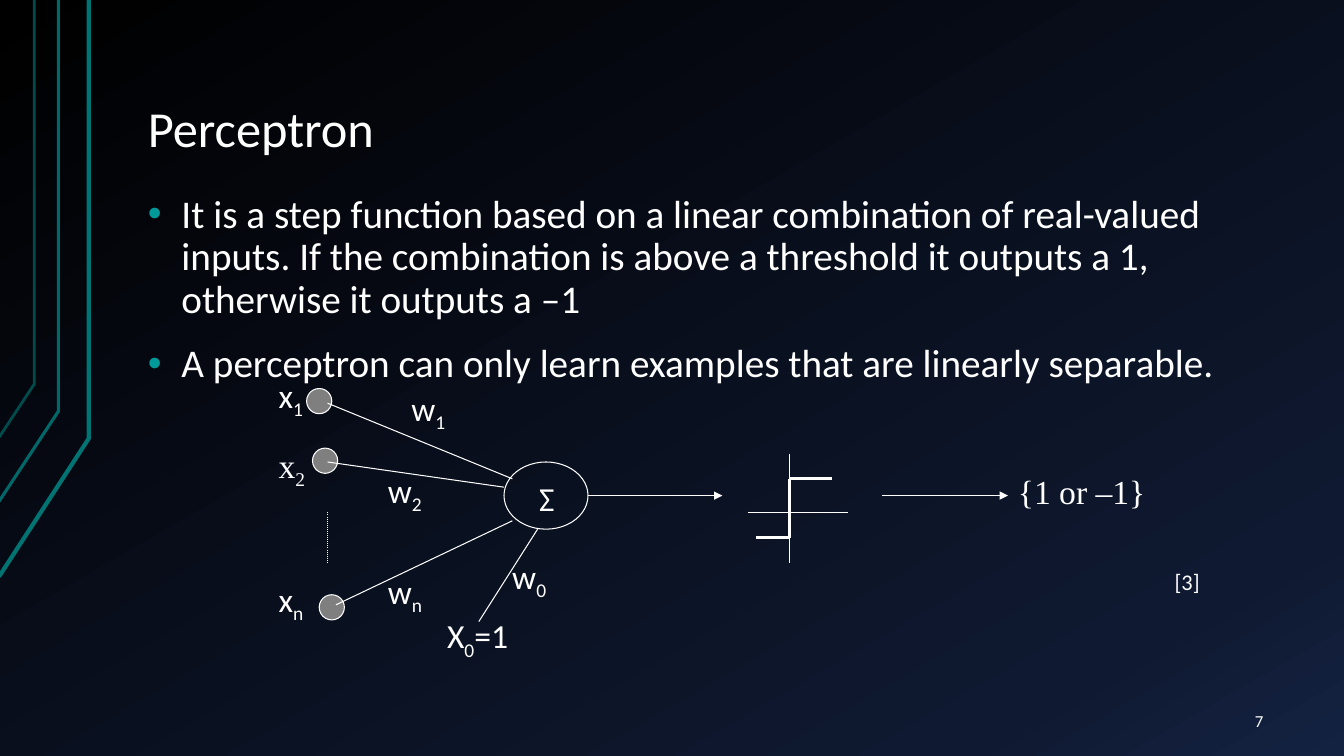
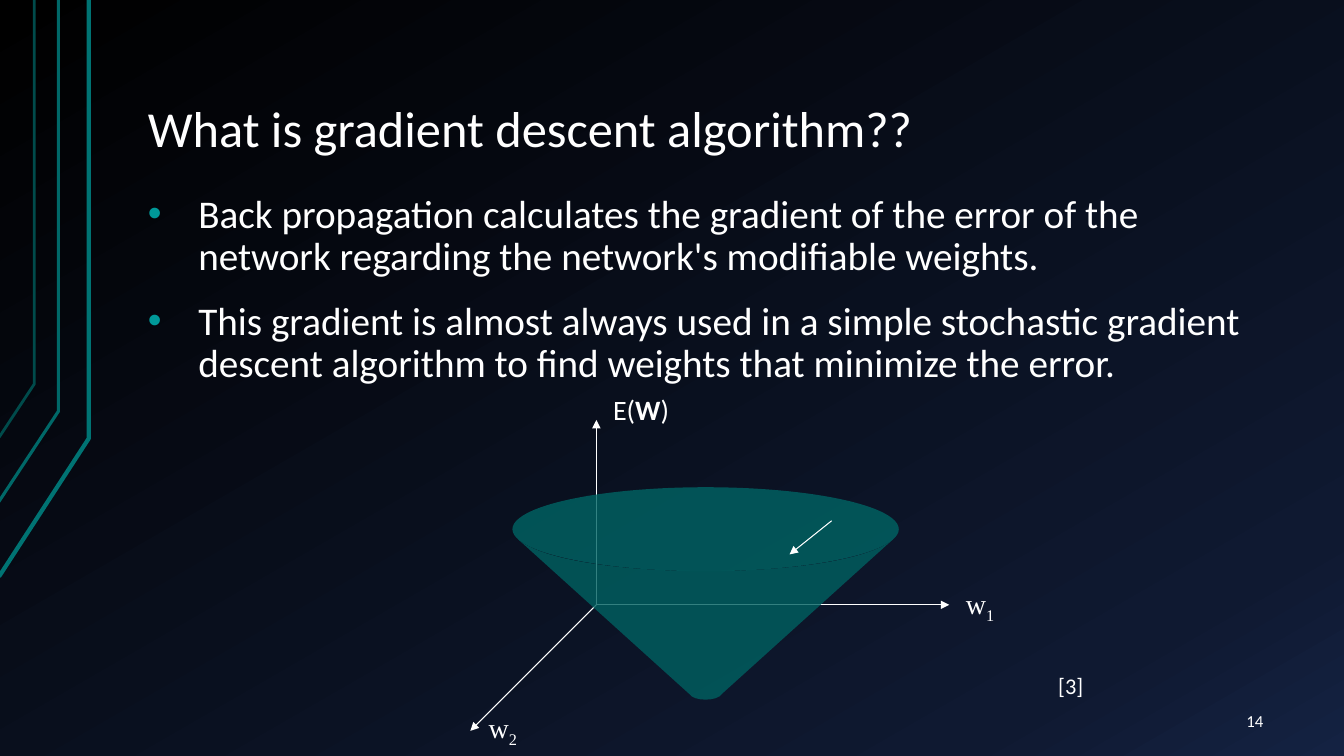
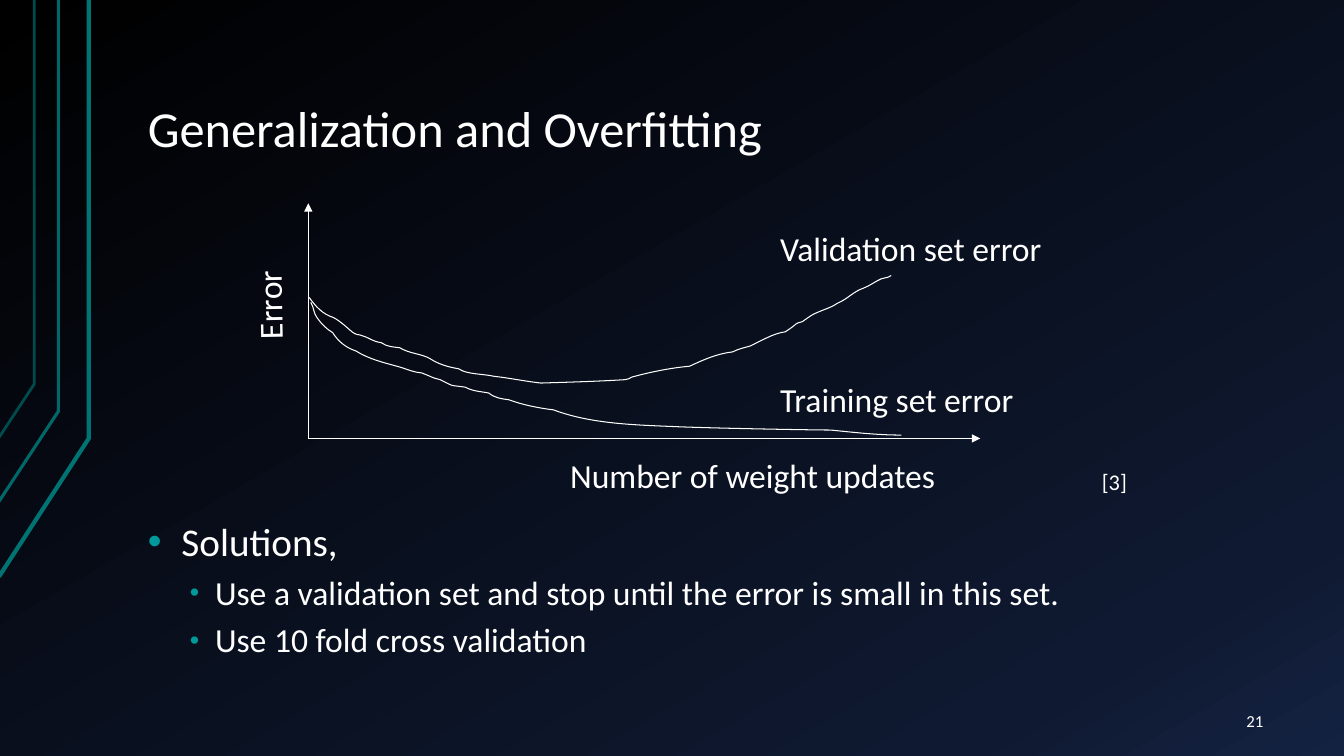
from dataclasses import dataclass
from math import cos, radians, sin, tan
from typing import NamedTuple

from lxml import etree
from pptx import Presentation, util as u
from pptx.dml.color import RGBColor
from pptx.enum import dml, shapes, text
from pptx.oxml.ns import qn

COLUMNS, ROWS = 160, 90  # grid cells of a twelfth of an inch
CELL = u.Inches(1) // 12
COLORS = {
    "text": "FFFFFF", "bullet": "009999", "node": "7F7F7F",
    "cone": "006464", "cone side": "006161",
    "stripe": "007373", "stripe mid": "006868", "stripe dim": "004B4B",
}
BACKGROUND = ((0, "000000"), (85, "0F1931"), (100, "142242"))
SANS, SERIF = "Calibri", "Times New Roman"
WIDE_MARGINS = (1.6, 0.8)
NORMAL_MARGINS = (1.2, 0.6)


class Point(NamedTuple):
    x: float
    y: float


class Box(NamedTuple):
    x: float
    y: float
    width: float
    height: float


class Run(NamedTuple):
    text: str
    subscript: bool = False
    bold: bool = False


@dataclass
class Label:
    box: Box
    runs: list
    size: float = 24
    font: str = SANS
    rotation: float = 0


@dataclass
class Line:
    start: Point
    end: Point
    width: float = 0.75
    arrow: bool = False
    dotted: bool = False


@dataclass
class Bullet:
    text: str
    size: float = 28
    left: float = 4
    hanging: float = 4
    before: float = 16
    bullet_percent: int = 100


@dataclass
class Outline:
    """A start and segments: two numbers for a line, six for a Bezier curve."""
    start: Point
    segments: list
    closed: bool = False


@dataclass
class Stripe:
    outline: Outline
    width: float
    color: str


STRIPES = [
    Stripe(Outline(Point(-0.12, 68.64), [(10.56, 52.2), (10.56, 0)]), 3, "stripe"),
    Stripe(Outline(Point(-0.24, 59.88), [(6.96, 48.96), (6.96, 0)]), 2.25, "stripe mid"),
    Stripe(Outline(Point(-0.12, 52.08), [(4.08, 45.72), (4.08, 0)]), 2, "stripe dim"),
]

VALIDATION_CURVE = Outline(Point(36.8, 35.4), [
    (37.6, 36.5, 38.4, 37.4, 39.7, 37.8), (40.6, 38.3, 41.2, 38.9, 41.9, 39.5),
    (42.6, 40, 42.5, 39.7, 43.2, 40), (44.2, 40.3, 44.2, 40.6, 45.4, 40.8),
    (46.1, 41.3, 46.8, 41.3, 47.6, 41.4), (48.7, 42.1, 50.2, 42.1, 51.2, 42.7),
    (52.3, 43.4, 53.4, 43.7, 54.6, 43.9), (55.6, 44.6, 57.6, 44.5, 58.8, 44.8),
    (60.7, 45, 62.5, 45.4, 64.4, 45.6), (67.8, 45.5, 71.2, 45.4, 74.4, 45.2),
    (74.8, 45.2, 75, 45, 75.2, 44.9), (77.4, 44.3, 79.8, 43.8, 82.1, 43.6),
    (83.8, 42.8, 85.4, 42.1, 87.2, 41.9), (88, 41.5, 88.6, 41.4, 89.3, 41.2),
    (90.6, 40.6, 92, 39.7, 93.5, 39.5), (95.2, 38.4, 94.4, 38.6, 95.5, 38.3),
    (96.1, 37.9, 96.7, 37.4, 97.3, 37.2), (98.2, 36.8, 99, 36.6, 99.7, 36.1),
    (100.9, 35.6, 101.6, 34.7, 102.8, 34.3), (103.6, 34, 104.2, 33.5, 104.9, 33.2),
    (106, 32.9, 105.6, 33.1, 106.1, 32.8)])
TRAINING_CURVE = Outline(Point(37, 36), [
    (37.4, 36.6, 37.3, 37.3, 37.8, 37.9), (38.3, 38.6, 38.9, 39.2, 39.6, 39.6),
    (40.3, 40.7, 41.2, 41.4, 42.4, 41.8), (44, 42.8, 45.8, 43.2, 47.6, 43.7),
    (48.6, 44, 49.1, 44.3, 50.2, 44.4), (52, 45.1, 51.2, 44.9, 52.4, 45.2),
    (54.2, 46.1, 53.3, 45.8, 55.4, 46.1), (56.3, 46.6, 57.2, 46.6, 58.2, 46.8),
    (58.9, 47.4, 59.8, 47.5, 60.6, 47.6), (62.2, 48.2, 64.2, 48.6, 65.9, 48.8),
    (70.4, 50.5, 75.8, 50.6, 80.5, 50.8), (85.2, 51, 97, 51.2, 98.9, 51.2),
    (101.8, 51.5, 104.5, 51.8, 107.3, 51.8)])


def cells(count: float) -> u.Emu:
    return u.Emu(round(count * CELL))


def rgb(name: str) -> RGBColor:
    return RGBColor.from_string(COLORS[name])


def place(box: Box) -> list:
    return [cells(value) for value in box]


# ---- Text ----

def add_run(paragraph, run: Run, size: float, font: str) -> None:
    item = paragraph.add_run()
    item.text = run.text
    item.font.size = u.Pt(size)
    item.font.name = font
    item.font.bold = run.bold
    item.font.color.rgb = rgb("text")
    if run.subscript:
        item._r.get_or_add_rPr().set("baseline", "-25000")


def add_frame(slide, box: Box, margins: tuple = NORMAL_MARGINS, wrap: bool = True):
    shape = slide.shapes.add_textbox(*place(box))
    frame = shape.text_frame
    frame.word_wrap = wrap
    frame.margin_left = frame.margin_right = cells(margins[0])
    frame.margin_top = frame.margin_bottom = cells(margins[1])
    return shape, frame


def add_label(slide, label: Label) -> None:
    shape, frame = add_frame(slide, label.box, wrap=False)
    frame.auto_size = text.MSO_AUTO_SIZE.SHAPE_TO_FIT_TEXT
    shape.rotation = label.rotation
    for run in label.runs:
        add_run(frame.paragraphs[0], run, label.size, label.font)


def variable(x: float, y: float, width: float, name: str, index: str, **style) -> Label:
    return Label(Box(x, y, width, 6), [Run(name), Run(index, True)], **style)


def caption(x: float, y: float, width: float, words: str, **style) -> Label:
    return Label(Box(x, y, width, 6), [Run(words)], **style)


def citation(x: float, y: float) -> Label:
    return Label(Box(x, y, 6, 4.4), [Run("[3]")], size=16)


def add_bullets(slide, bullets: list, top: float = 22.36) -> None:
    _, frame = add_frame(slide, Box(16, top, 136, 81 - top), WIDE_MARGINS)
    for index, bullet in enumerate(bullets):
        paragraph = frame.add_paragraph() if index else frame.paragraphs[0]
        properties = paragraph._p.get_or_add_pPr()
        properties.set("marL", str(cells(bullet.left)))
        properties.set("indent", str(-cells(bullet.hanging)))
        color = etree.SubElement(properties, qn("a:buClr"))
        etree.SubElement(color, qn("a:srgbClr"), val=COLORS["bullet"])
        etree.SubElement(properties, qn("a:buSzPct"), val=str(bullet.bullet_percent * 1000))
        etree.SubElement(properties, qn("a:buFont"), typeface="Arial")
        etree.SubElement(properties, qn("a:buChar"), char="•")
        paragraph.line_spacing = 0.9
        if index:
            paragraph.space_before = u.Pt(bullet.before)
        add_run(paragraph, Run(bullet.text), bullet.size, SANS)


# ---- Shapes ----

def set_fill(shape, color: str, opacity: int = 100) -> None:
    shape.fill.solid()
    shape.fill.fore_color.rgb = rgb(color)
    value = shape._element.spPr.find(qn("a:solidFill")).find(qn("a:srgbClr"))
    if opacity < 100:
        etree.SubElement(value, qn("a:alpha"), val=str(opacity * 1000))


def set_outline(shape, color: str, width: float = 0.75) -> None:
    shape.line.color.rgb = rgb(color)
    shape.line.width = u.Pt(width)


def add_ellipse(slide, box: Box):
    shape = slide.shapes.add_shape(shapes.MSO_SHAPE.OVAL, *place(box))
    shape.shadow.inherit = False
    return shape


def add_outline(slide, outline: Outline):
    builder = slide.shapes.build_freeform(cells(outline.start.x), cells(outline.start.y))
    ends = [(cells(segment[-2]), cells(segment[-1])) for segment in outline.segments]
    builder.add_line_segments(ends, close=outline.closed)
    shape = builder.convert_to_shape()
    shape.shadow.inherit = False
    shape.fill.background()
    # Bend the straight segments that have control points
    straight = shape._element.findall(".//" + qn("a:lnTo"))
    for element, segment in zip(straight, outline.segments):
        if len(segment) == 6:
            curve = etree.Element(qn("a:cubicBezTo"))
            for x, y in zip(segment[::2], segment[1::2]):
                etree.SubElement(curve, qn("a:pt"), x=str(cells(x) - shape.left),
                                 y=str(cells(y) - shape.top))
            element.getparent().replace(element, curve)
    return shape


def add_line(slide, line: Line) -> None:
    connector = slide.shapes.add_connector(
        shapes.MSO_CONNECTOR.STRAIGHT,
        *[cells(value) for value in (*line.start, *line.end)])
    set_outline(connector, "text", line.width)
    if line.dotted:
        connector.line.dash_style = dml.MSO_LINE.ROUND_DOT
    properties = connector._element.spPr
    if line.arrow:
        etree.SubElement(properties.find(qn("a:ln")), qn("a:tailEnd"), type="triangle")
    etree.SubElement(properties, qn("a:effectLst"))


def elliptic_arc(center: Point, radius_x: float, radius_y: float, first: float, last: float):
    """Start point and single Bezier segment of an arc between two angles."""
    a, b = radians(first), radians(last)
    reach = 4 / 3 * tan((b - a) / 4)
    unit = [(cos(a), sin(a)),
            (cos(a) - reach * sin(a), sin(a) + reach * cos(a)),
            (cos(b) + reach * sin(b), sin(b) - reach * cos(b)),
            (cos(b), sin(b))]
    start, *rest = [Point(center.x + radius_x * x, center.y + radius_y * y) for x, y in unit]
    return start, tuple(value for point in rest for value in point)


# ---- Shared slide frame ----

def add_slide(presentation, title: str, number: int):
    slide = presentation.slides.add_slide(presentation.slide_layouts[6])
    fill = slide.background.fill
    fill.gradient()
    fill.gradient_angle = 300
    stops = slide.element.find(".//" + qn("a:gsLst"))
    for stop in list(stops):
        stops.remove(stop)
    for position, color in BACKGROUND:
        stop = etree.SubElement(stops, qn("a:gs"), pos=str(position * 1000))
        etree.SubElement(stop, qn("a:srgbClr"), val=color)
    for stripe in STRIPES:
        set_outline(add_outline(slide, stripe.outline), stripe.color, stripe.width)

    _, frame = add_frame(slide, Box(16, 3.6, 136, 16.1), WIDE_MARGINS)
    frame.vertical_anchor = text.MSO_ANCHOR.BOTTOM
    frame.paragraphs[0].line_spacing = 0.9
    add_run(frame.paragraphs[0], Run(title), 36, SANS)

    _, frame = add_frame(slide, Box(138.6, 83.4, 13.4, 4.8), WIDE_MARGINS)
    frame.vertical_anchor = text.MSO_ANCHOR.MIDDLE
    frame.paragraphs[0].alignment = text.PP_ALIGN.RIGHT
    add_run(frame.paragraphs[0], Run(str(number)), 12, SANS)
    return slide


def add_diagram(slide, lines: list, labels: list) -> None:
    for line in lines:
        add_line(slide, line)
    for label in labels:
        add_label(slide, label)


# ---- Slides ----

def build_perceptron(presentation) -> None:
    slide = add_slide(presentation, "Perceptron", 7)
    add_bullets(slide, [
        Bullet("It is a step function based on a linear combination of real-valued inputs. "
               "If the combination is above a threshold it outputs a 1, otherwise it outputs a –1"),
        Bullet("A perceptron can only learn examples that are linearly separable."),
    ])
    for x, y in ((38, 70.8), (37.2, 53.35), (36.5, 46.25)):
        node = add_ellipse(slide, Box(x, y, 3, 3))
        set_fill(node, "node")
        set_outline(node, "text")
    summation = add_ellipse(slide, Box(60, 55, 10, 8))
    summation.fill.background()
    set_outline(summation, "text")
    weights = [
        Line(Point(39, 48), Point(61, 57)),
        Line(Point(39, 55), Point(60, 58)),
        Line(Point(40, 72), Point(61, 62)),
        Line(Point(57, 74), Point(64, 63)),
        Line(Point(39, 61), Point(39, 67), dotted=True),
    ]
    flow = [Line(Point(70, 59), Point(86, 59), arrow=True),
            Line(Point(105, 59), Point(120, 59), arrow=True)]
    step_axes = [Line(Point(94, 54), Point(94, 67)), Line(Point(89, 61), Point(101, 61))]
    corners = [Point(90, 64), Point(94, 64), Point(94, 57), Point(99, 57)]
    step = [Line(start, end, 2.25) for start, end in zip(corners, corners[1:])]
    add_diagram(slide, weights + flow + step_axes + step, [
        variable(32, 44, 5.8, "x", "1"),
        variable(32, 52.36, 5.8, "x", "2", font=SERIF),
        variable(32, 68.34, 5.8, "x", "n"),
        Label(Box(52.04, 72.66, 10, 6), [Run("X"), Run("0", True), Run("=1")]),
        variable(59.8, 65.56, 6.6, "w", "0"),
        variable(47.8, 45.6, 6.8, "w", "1"),
        variable(45, 55.3, 6.6, "w", "2"),
        variable(45, 67.36, 6.7, "w", "n"),
        caption(63, 56.34, 4.3, "Σ"),
        caption(120, 55.46, 17.6, "{1 or –1}", font=SERIF),
        citation(138.66, 67),
    ])


def build_gradient_descent(presentation) -> None:
    slide = add_slide(presentation, "What is gradient descent algorithm??", 14)
    add_bullets(slide, [
        Bullet("Back propagation calculates the gradient of the error of the network "
               "regarding the network's modifiable weights.", left=6, hanging=6),
        Bullet("This gradient is almost always used in a simple stochastic gradient "
               "descent algorithm to find weights that minimize the error.", left=6, hanging=6),
    ])
    origin = Point(71, 72)
    for end in (Point(113, 72), Point(56, 87), Point(71, 50)):
        add_line(slide, Line(origin, end, arrow=True))

    # Error surface: side of the cone, then its open top
    rim, tip = Point(84, 63), Point(84, 82.4)
    rim_start, rim_arc = elliptic_arc(rim, 23, 5, 166, 14)
    tip_start, tip_arc = elliptic_arc(tip, 2, 0.9, 14, 166)
    side = add_outline(slide, Outline(rim_start, [rim_arc, tip_start, tip_arc], closed=True))
    set_fill(side, "cone side", 80)
    side.line.fill.background()
    top = add_ellipse(slide, Box(rim.x - 23, rim.y - 5, 46, 10))
    set_fill(top, "cone", 80)
    top.line.fill.background()

    add_diagram(slide, [Line(Point(99, 62), Point(94, 66), arrow=True)], [
        variable(113.8, 69.2, 5.9, "w", "1", size=20, font=SERIF),
        variable(57, 84, 5.9, "w", "2", size=20, font=SERIF),
        Label(Box(71.8, 46.14, 9.1, 5.3), [Run("E("), Run("W", bold=True), Run(")")], 20),
        citation(124.8, 79.46),
    ])


def build_overfitting(presentation) -> None:
    slide = add_slide(presentation, "Generalization and Overfitting", 21)
    details = {"size": 24, "left": 8, "hanging": 3, "before": 8, "bullet_percent": 80}
    add_bullets(slide, [
        Bullet("Solutions,"),
        Bullet("Use a validation set and stop until the error is small in this set.", **details),
        Bullet("Use 10 fold cross validation", **details),
    ], top=61.42)
    for curve in (VALIDATION_CURVE, TRAINING_CURVE):
        set_outline(add_outline(slide, curve), "text")
    origin = Point(36.7, 52.2)
    axes = [Line(origin, end, arrow=True) for end in (Point(116.7, 52.2), Point(36.7, 24.2))]
    add_diagram(slide, axes, [
        caption(66.7, 53.56, 46.3, "Number of weight updates"),
        caption(26.6, 33.2, 10.8, "Error", rotation=268.8),
        caption(91.7, 26.5, 33.8, "Validation set error"),
        caption(91.7, 44.5, 30.4, "Training set error"),
        citation(130, 55.14),
    ])


def main() -> None:
    presentation = Presentation()
    presentation.slide_width = cells(COLUMNS)
    presentation.slide_height = cells(ROWS)
    build_perceptron(presentation)
    build_gradient_descent(presentation)
    build_overfitting(presentation)
    presentation.save("out.pptx")


if __name__ == "__main__":
    main()
